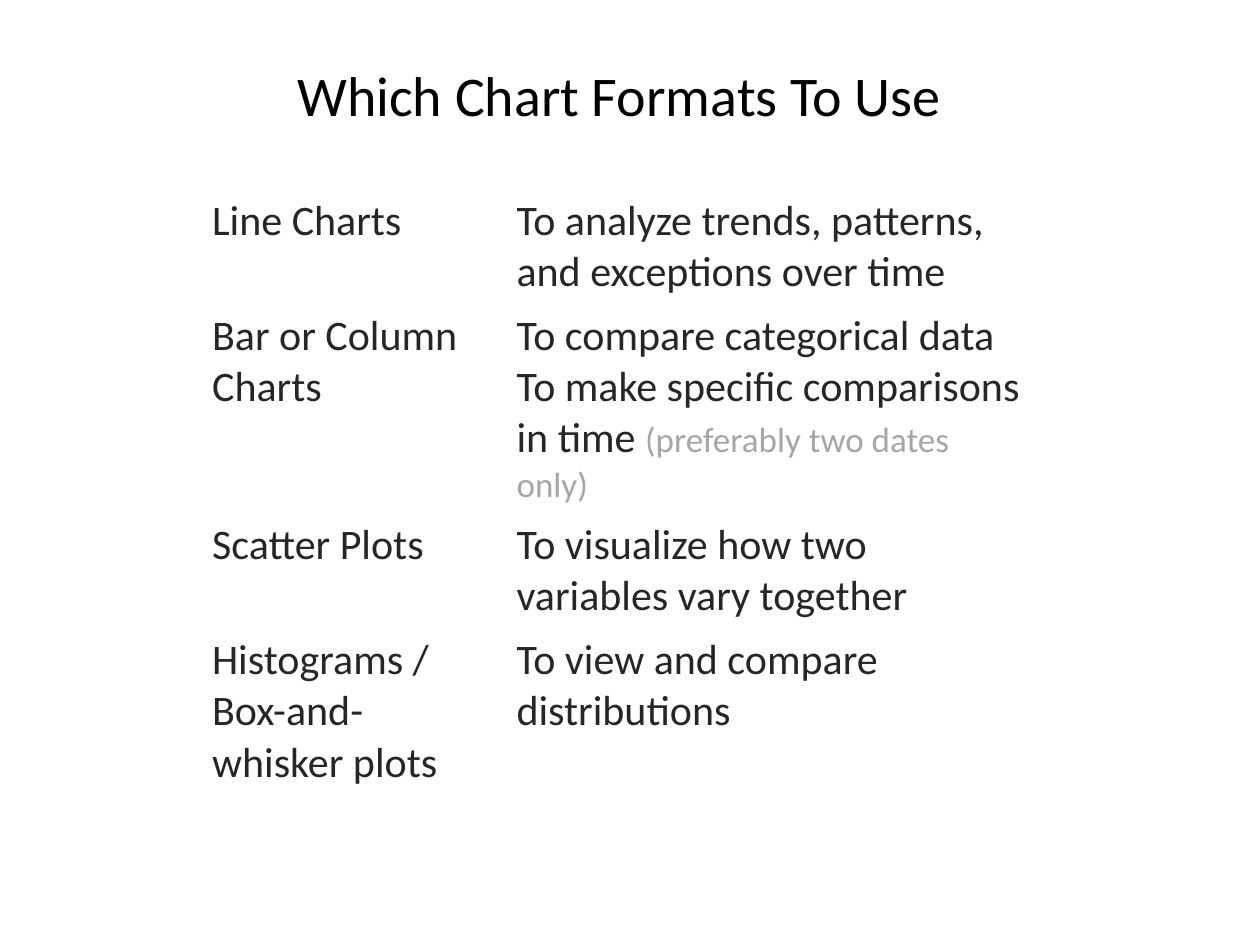
from pptx import Presentation
from pptx.dml.color import RGBColor
from pptx.enum.text import MSO_ANCHOR, PP_ALIGN
from pptx.util import Pt

CENTER, LEFT = PP_ALIGN.CENTER, PP_ALIGN.LEFT
MIDDLE, TOP = MSO_ANCHOR.MIDDLE, MSO_ANCHOR.TOP

THEME = {
    "font": "Calibri",
    "title": {"size": 32, "color": "000000"},
    "body": {"size": 24, "color": "262626"},
    "note": {"size": 20, "color": "A6A6A6"},
}

TITLE = "Which Chart Formats To Use"
# Each row: chart format, then its uses; a use is a list of (text, style) runs.
ROWS = [
    ("Line Charts",
     [[("To analyze trends, patterns, and exceptions over time", "body")]]),
    ("Bar or Column Charts",
     [[("To compare categorical data", "body")],
      [("To make specific comparisons in time ", "body"),
       ("(preferably two dates only)", "note")]]),
    ("Scatter Plots",
     [[("To visualize how two variables vary together", "body")]]),
    ("Histograms / Box-and-whisker plots",
     [[("To view and compare distributions", "body")]]),
]

TITLE_BOX = (30, 30, 648, 48)
TABLE_LEFT, TABLE_TOP = 114, 108
COLUMN_WIDTHS = (174, 306)
ROW_HEIGHTS = (65, 119, 65, 91)


def write(tf, paragraphs, align=LEFT):
    for i, runs in enumerate(paragraphs):
        p = tf.paragraphs[0] if i == 0 else tf.add_paragraph()
        p.alignment = align
        for text, style in runs:
            r = p.add_run()
            r.text = text
            r.font.name = THEME["font"]
            r.font.size = Pt(THEME[style]["size"])
            r.font.color.rgb = RGBColor.from_string(THEME[style]["color"])
            r.font.bold = False


def add_title(s):
    title = s.shapes.title
    title.left, title.top, title.width, title.height = map(Pt, TITLE_BOX)
    tf = title.text_frame
    tf.word_wrap = True
    tf.vertical_anchor = MIDDLE
    write(tf, [[(TITLE, "title")]], align=CENTER)


def add_format_table(s):
    table = s.shapes.add_table(
        len(ROWS), len(COLUMN_WIDTHS), Pt(TABLE_LEFT), Pt(TABLE_TOP),
        Pt(sum(COLUMN_WIDTHS)), Pt(sum(ROW_HEIGHTS))).table
    table.horz_banding = False
    for column, width in zip(table.columns, COLUMN_WIDTHS):
        column.width = Pt(width)
    for i, (chart_format, uses) in enumerate(ROWS):
        table.rows[i].height = Pt(ROW_HEIGHTS[i])
        for j, paragraphs in enumerate(([[(chart_format, "body")]], uses)):
            cell = table.cell(i, j)
            cell.fill.background()
            cell.vertical_anchor = TOP
            write(cell.text_frame, paragraphs)


def main():
    prs = Presentation()
    prs.slide_width, prs.slide_height = Pt(720), Pt(540)
    s = prs.slides.add_slide(prs.slide_layouts[5])
    add_title(s)
    add_format_table(s)
    prs.save("out.pptx")


if __name__ == "__main__":
    main()
